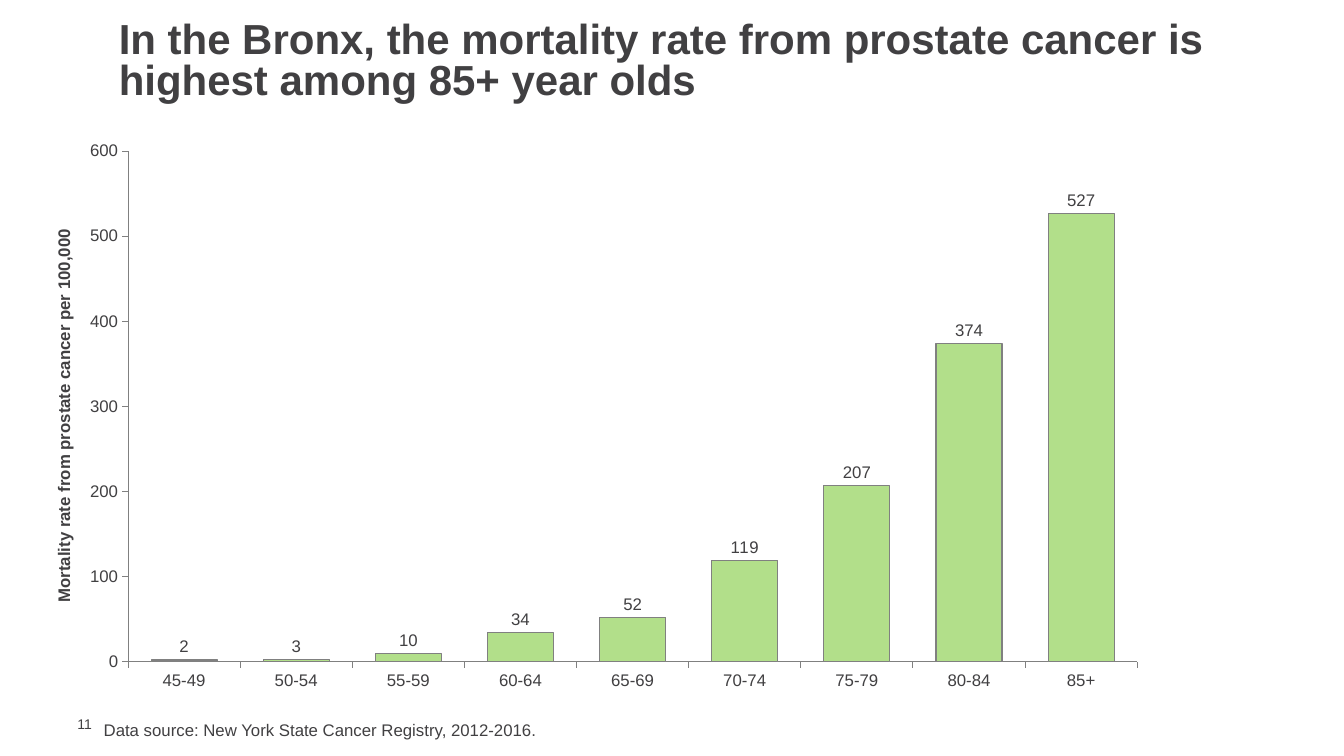
"""Build a slide charting prostate cancer mortality by age in the Bronx."""
import pptx
import pptx.chart.data
import pptx.dml.color
import pptx.enum.chart
import pptx.enum.text
import pptx.oxml
import pptx.oxml.ns
import pptx.util
from pptx.util import Inches

COLORS = {"text": "414042", "bar": "B2DF8A", "line": "808080"}
MORTALITY = {
    "45-49": 2, "50-54": 3, "55-59": 10, "60-64": 34, "65-69": 52,
    "70-74": 119, "75-79": 207, "80-84": 374, "85+": 527,
}
PLOT_LAYOUT = {"x": 0.07, "y": 0.03, "w": 0.91, "h": 0.9}


def rgb(name):
    """Return the named palette colour."""
    return pptx.dml.color.RGBColor.from_string(COLORS[name])


def set_all(target, values):
    """Set every attribute in values on target."""
    for key, value in values.items():
        setattr(target, key, value)


def style_font(font, size, bold=False):
    """Give a font the slide's typeface and colour."""
    set_all(font, {"name": "Arial", "size": pptx.util.Pt(size), "bold": bold})
    font.color.rgb = rgb("text")


def style_line(line):
    """Give a line the thin grey stroke of the chart."""
    line.color.rgb = rgb("line")
    line.width = pptx.util.Pt(0.75)


def add_text(slide, box, text, size, bold=False, spacing=None, frame_format=None):
    """Add a wrapped text box holding one paragraph."""
    frame = slide.shapes.add_textbox(*map(Inches, box)).text_frame
    set_all(frame, {"word_wrap": True,
                    "auto_size": pptx.enum.text.MSO_AUTO_SIZE.SHAPE_TO_FIT_TEXT,
                    **(frame_format or {})})
    paragraph = frame.paragraphs[0]
    paragraph.line_spacing = spacing
    run = paragraph.add_run()
    run.text = text
    style_font(run.font, size, bold)


def style_axis(axis):
    """Format an axis with outside ticks and no gridlines."""
    set_all(axis, {"has_major_gridlines": False,
                   "major_tick_mark": pptx.enum.chart.XL_TICK_MARK.OUTSIDE,
                   "minor_tick_mark": pptx.enum.chart.XL_TICK_MARK.NONE})
    style_font(axis.tick_labels.font, 12)
    style_line(axis.format.line)


def place_plot(chart):
    """Fix the inner plot area inside the chart frame."""
    plot_area = chart.plots[0]._element.getparent()
    for old_layout in plot_area.findall(pptx.oxml.ns.qn("c:layout")):
        plot_area.remove(old_layout)
    modes = "".join(f'<c:{side}Mode val="edge"/>' for side in "xy")
    sizes = "".join(f'<c:{key} val="{value}"/>' for key, value in PLOT_LAYOUT.items())
    plot_area.insert(0, pptx.oxml.parse_xml(
        f'<c:layout {pptx.oxml.ns.nsdecls("c")}><c:manualLayout>'
        f'<c:layoutTarget val="inner"/>{modes}{sizes}</c:manualLayout></c:layout>'))


def add_mortality_chart(slide, box):
    """Add the column chart of mortality rate by age group."""
    data = pptx.chart.data.CategoryChartData(number_format="0")
    data.categories = list(MORTALITY)
    data.add_series("Series 1", list(MORTALITY.values()))
    chart = slide.shapes.add_chart(
        pptx.enum.chart.XL_CHART_TYPE.COLUMN_CLUSTERED, *map(Inches, box), data).chart
    set_all(chart, {"has_legend": False, "has_title": False})
    style_font(chart.font, 10)

    rate_axis = chart.value_axis
    for axis in (chart.category_axis, rate_axis):
        style_axis(axis)
    set_all(rate_axis, {"minimum_scale": 0, "maximum_scale": 600, "major_unit": 100})
    set_all(rate_axis.tick_labels, {"number_format": "0", "number_format_is_linked": False})
    rate_title = rate_axis.axis_title.text_frame.paragraphs[0].add_run()
    rate_title.text = "Mortality rate from prostate cancer per 100,000"
    style_font(rate_title.font, 12, bold=True)

    columns = chart.plots[0]
    set_all(columns, {"gap_width": 70, "vary_by_categories": False})
    rates = columns.series[0]
    rates.format.fill.solid()
    rates.format.fill.fore_color.rgb = rgb("bar")
    style_line(rates.format.line)
    labels = rates.data_labels
    set_all(labels, {"show_value": True, "number_format": "0",
                     "number_format_is_linked": False,
                     "position": pptx.enum.chart.XL_LABEL_POSITION.OUTSIDE_END})
    style_font(labels.font, 12)
    place_plot(chart)


def main():
    """Build and save the slide."""
    deck = pptx.Presentation()
    set_all(deck, {"slide_width": Inches(13.33), "slide_height": Inches(7.5)})
    slide = deck.slides.add_slide(deck.slide_layouts[6])
    middle = {"vertical_anchor": pptx.enum.text.MSO_ANCHOR.MIDDLE}
    number_format = {**middle, "margin_left": Inches(0.1), "margin_right": 0,
                     "margin_top": 0, "margin_bottom": 0}
    add_text(slide, (0.67, 7.1, 0.43, 0.17), "11", 10, frame_format=number_format)
    add_text(slide, (1.08, 0.17, 11.17, 0.91),
             "In the Bronx, the mortality rate from prostate cancer is "
             "highest among 85+ year olds",
             30, bold=True, spacing=0.8, frame_format=middle)
    add_mortality_chart(slide, (0.5, 1.33, 11, 5.63))
    add_text(slide, (0.93, 7.09, 9.92, 0.3),
             "Data source: New York State Cancer Registry, 2012-2016.", 12)
    deck.save("out.pptx")


if __name__ == "__main__":
    main()
